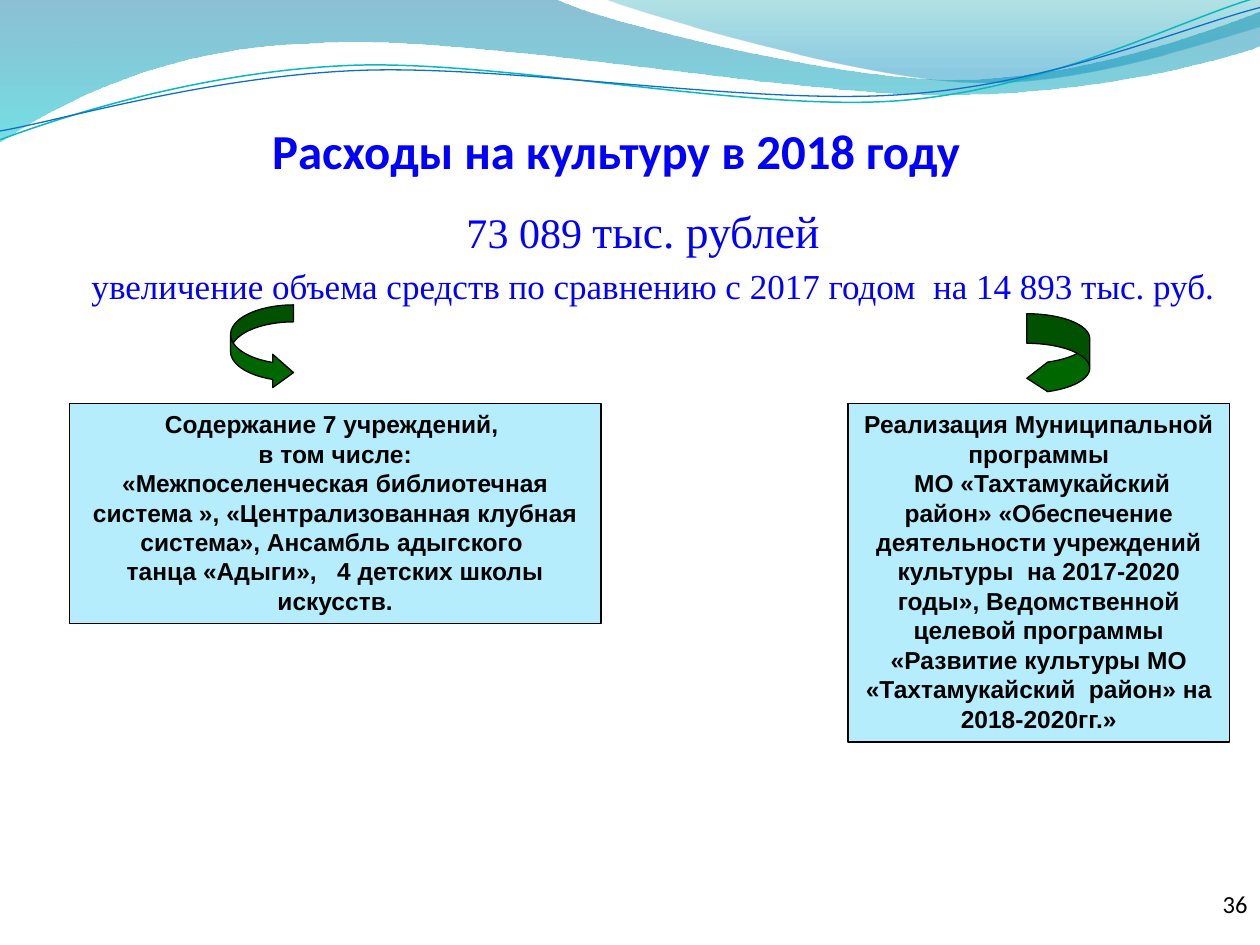
from dataclasses import dataclass
from lxml import etree
from pptx import Presentation, util as u
from pptx.dml import color
from pptx.enum import shapes, text
from pptx.oxml import ns

WIDTH, HEIGHT = u.Inches(10), u.Inches(7.5)
COLUMN, ROW = WIDTH / 100, HEIGHT / 75
BLUE, GREEN, BLACK, PALE = "0000FF", "006600", "000000", "B5EDFD"
UNITS_PER_INCH = 1000


@dataclass
class Box:
    column: float
    row: float
    columns: float
    rows: float

    def lengths(self) -> list[int]:
        return [round(self.column * COLUMN), round(self.row * ROW),
                round(self.columns * COLUMN), round(self.rows * ROW)]


@dataclass
class Run:
    words: str
    size: float
    font: str
    colour: str = BLACK
    bold: bool = False


@dataclass
class Wave:
    start: tuple
    segments: list
    stops: tuple = ()
    line: str = ""
    weight: float = 0


@dataclass
class Arrow:
    preset: shapes.MSO_SHAPE
    box: Box
    adjustments: tuple


@dataclass
class Panel:
    box: Box
    lines: list


WAVES = [
    Wave((0, 0), [
        [(4.4, -0.01)],
        [(4.76, 0.17), (6.64, 0.63), (7.58, 0.63)],
        [(8.53, 0.63), (9.58, 0.26), (10, 0.09)],
        [(10.01, 0.36)],
        [(9.83, 0.44), (8.7, 0.76), (7.46, 0.75)],
        [(6.22, 0.75), (3.82, 0.28), (2.57, 0.34)],
        [(1.29, 0.36), (0.46, 0.83), (-0.01, 1.13)],
    ], stops=((0, "0074A1", 45), (1, "00C6CF", 55))),
    Wave((4.79, -0.01), [
        [(5.09, 0.11), (6.82, 0.62), (7.69, 0.65)],
        [(8.56, 0.69), (9.61, 0.32), (10, 0.21)],
        [(10, 0)],
    ], stops=((0, "00A1A9", 30), (0.8, "008BBF", 45))),
    Wave((0, 1.11), [
        [(0.48, 0.93), (1.58, 0.57), (2.77, 0.52)],
        [(3.95, 0.47), (5.93, 0.89), (7.13, 0.8)],
        [(8.33, 0.71), (9.38, 0.15), (9.98, -0.02)],
    ], line="0AB8BF", weight=0.85),
    Wave((0, 1.04), [
        [(0.47, 0.96), (1.64, 0.61), (2.83, 0.56)],
        [(4.03, 0.51), (5.97, 0.84), (7.17, 0.75)],
        [(8.36, 0.67), (9.41, 0.21), (10, 0.06)],
    ], line="0F6FC6", weight=0.75),
]

ARROWS = [
    Arrow(shapes.MSO_SHAPE.CURVED_RIGHT_ARROW, Box(18.3, 24.2, 5, 6.7), (0.27, 0.53, 0.33)),
    Arrow(shapes.MSO_SHAPE.CURVED_LEFT_ARROW, Box(81.5, 24.9, 5, 6.3), (0.47, 0.47, 0.33)),
]

PANELS = [
    Panel(Box(5.5, 32, 42.2, 17.5), [
        "Содержание 7 учреждений, ",
        "в том числе:",
        "«Межпоселенческая библиотечная система », «Централизованная клубная "
        "система», Ансамбль адыгского ",
        "танца «Адыги»,   4 детских школы искусств.",
    ]),
    Panel(Box(67.3, 32, 30.3, 26.9), [
        "Реализация Муниципальной программы",
        " МО «Тахтамукайский район» «Обеспечение деятельности учреждений культуры  "
        "на 2017-2020 годы», Ведомственной целевой программы «Развитие культуры "
        "МО «Тахтамукайский  район» на 2018-2020гг.»",
    ]),
]


def rgb(value: str) -> color.RGBColor:
    return color.RGBColor.from_string(value)


def place(shape, box: Box) -> None:
    shape.left, shape.top, shape.width, shape.height = box.lengths()


def write(frame, paragraphs: list, alignment=text.PP_ALIGN.CENTER, space: float = 0) -> None:
    for index, runs in enumerate(paragraphs):
        paragraph = frame.add_paragraph() if index else frame.paragraphs[0]
        paragraph.alignment = alignment
        paragraph.space_before = u.Pt(space if index else 0)
        for item in runs:
            run = paragraph.add_run()
            run.text = item.words
            run.font.size, run.font.name = u.Pt(item.size), item.font
            run.font.bold = item.bold
            run.font.color.rgb = rgb(item.colour)


def bend(shape, segments: list) -> None:
    lines = iter(shape._element.spPr.findall(".//" + ns.qn("a:lnTo")))
    for segment in segments:
        first, *others = [next(lines) for _ in segment]
        if others:
            curve = etree.Element(ns.qn("a:cubicBezTo"))
            first.addprevious(curve)
            for line in (first, *others):
                curve.append(line[0])
                line.getparent().remove(line)


def draw_wave(slide, wave: Wave) -> None:
    points = [wave.start] + [point for segment in wave.segments for point in segment]
    scaled = [(x * UNITS_PER_INCH, y * UNITS_PER_INCH) for x, y in points]
    builder = slide.shapes.build_freeform(*scaled[0], scale=u.Inches(1) / UNITS_PER_INCH)
    builder.add_line_segments(scaled[1:], close=bool(wave.stops))
    shape = builder.convert_to_shape()
    bend(shape, wave.segments)
    shape.shadow.inherit = False
    if not wave.stops:
        shape.fill.background()
        shape.line.color.rgb, shape.line.width = rgb(wave.line), u.Pt(wave.weight)
        return
    shape.line.fill.background()
    shape.fill.gradient()
    shape.fill.gradient_angle = 270
    elements = shape._element.spPr.findall(".//" + ns.qn("a:gs"))
    for stop, element, (position, value, opacity) in zip(
            shape.fill.gradient_stops, elements, wave.stops):
        stop.position, stop.color.rgb = position, rgb(value)
        etree.SubElement(element[0], ns.qn("a:alpha"), val=str(opacity * 1000))


def draw_shape(slide, preset, box: Box, fill: str):
    shape = slide.shapes.add_shape(preset, *box.lengths())
    shape.shadow.inherit = False
    shape.fill.solid()
    shape.fill.fore_color.rgb = rgb(fill)
    shape.line.color.rgb, shape.line.width = rgb(BLACK), u.Pt(0.75)
    return shape


def draw_arrow(slide, arrow: Arrow) -> None:
    shape = draw_shape(slide, arrow.preset, arrow.box, GREEN)
    for index, value in enumerate(arrow.adjustments):
        shape.adjustments[index] = value


def draw_panel(slide, panel: Panel) -> None:
    frame = draw_shape(slide, shapes.MSO_SHAPE.RECTANGLE, panel.box, PALE).text_frame
    frame.word_wrap = True
    frame.vertical_anchor = text.MSO_ANCHOR.TOP
    frame.auto_size = text.MSO_AUTO_SIZE.SHAPE_TO_FIT_TEXT
    write(frame, [[Run(line, 14, "Arial", bold=True)] for line in panel.lines])


def draw_title(slide) -> None:
    title = slide.shapes.title
    place(title, Box(3.5, 5.2, 90.8, 9))
    frame = title.text_frame
    frame.auto_size = text.MSO_AUTO_SIZE.NONE
    frame.vertical_anchor = text.MSO_ANCHOR.BOTTOM
    frame.margin_left = frame.margin_right = frame.margin_bottom = 0
    write(frame, [[Run("Расходы на культуру в 2018 году", 27.9, "Calibri", BLUE, True)]])


def draw_text(slide, box: Box, paragraphs: list, **options):
    frame = slide.shapes.add_textbox(*box.lengths()).text_frame
    frame.word_wrap = True
    write(frame, paragraphs, **options)
    return frame


def main() -> None:
    presentation = Presentation()
    presentation.slide_width, presentation.slide_height = WIDTH, HEIGHT
    slide = presentation.slides.add_slide(presentation.slide_layouts[5])
    for wave in WAVES:
        draw_wave(slide, wave)
    draw_title(slide)
    serif = "Times New Roman"
    draw_text(slide, Box(5, 15.6, 93, 55.7), [
        [Run("73 089 ", 24, serif, BLUE), Run("тыс. рублей ", 26, serif, BLUE)],
        [Run(" увеличение объема средств по сравнению с 2017 годом  на 14 893 тыс. руб.",
             20, serif, BLUE)],
    ], space=4)
    for arrow in ARROWS:
        draw_arrow(slide, arrow)
    for panel in PANELS:
        draw_panel(slide, panel)
    number = draw_text(slide, Box(79.2, 69.2, 20.8, 5), [[Run("36", 14, "Calibri")]],
                       alignment=text.PP_ALIGN.RIGHT)
    number.vertical_anchor = text.MSO_ANCHOR.MIDDLE
    presentation.save("out.pptx")


if __name__ == "__main__":
    main()
